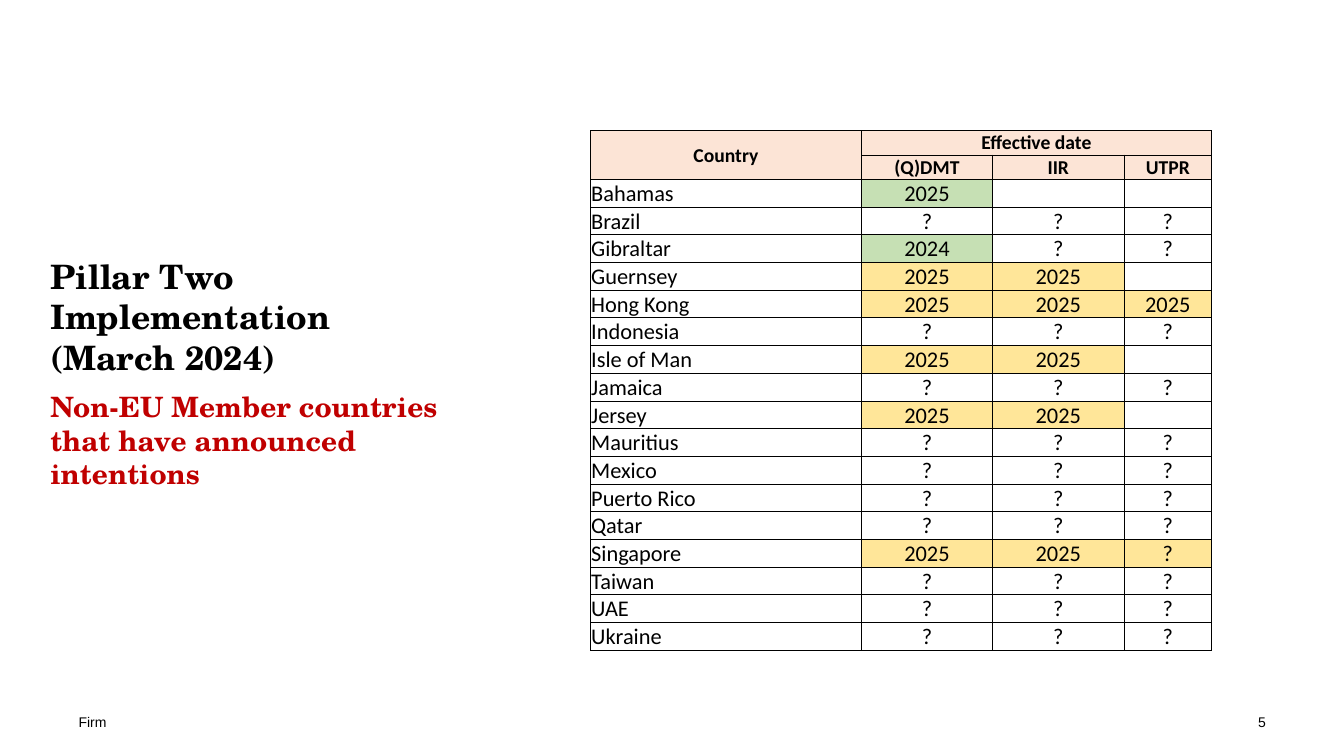
from lxml.etree import SubElement
from pptx import Presentation
from pptx.dml.color import RGBColor
from pptx.enum.text import MSO_ANCHOR, PP_ALIGN
from pptx.oxml import parse_xml
from pptx.oxml.ns import nsdecls, qn
from pptx.util import Cm, Pt

BLACK, RED, PEACH = "000000", "C00000", "FCE4D6"
FILLS = {"g": "C6E0B4", "y": "FFE699"}


def color(code):
    return RGBColor.from_string(code)


def write(par, text, size, face, ink=BLACK, bold=False, align=PP_ALIGN.LEFT):
    """Put styled text in a paragraph; an empty one keeps its font size."""
    par.text = text
    par.alignment = align
    for run in par.runs:
        for name, value in {"size": Pt(size), "name": face, "bold": bold}.items():
            setattr(run.font, name, value)
        run.font.color.rgb = color(ink)
    if not text:
        end = SubElement(par._p, qn("a:endParaRPr"), sz=str(size * 100))
        SubElement(end, qn("a:latin"), typeface=face)


prs = Presentation()
prs.slide_width, prs.slide_height = Cm(33.87), Cm(19.05)
slide = prs.slides.add_slide(prs.slide_layouts[6])

# Title and footer: box, then paragraphs as (text, size, font, colour, bold, align)
serif = "TeX Gyre Schola"
boxes = [
    ((1.27, 6.45, 10.95, 7.32), [
        ("Pillar Two Implementation\v(March 2024)", 24, serif, BLACK, True),
        ("Non-EU Member countries that have announced intentions",
         20, serif, RED, True)]),
    ((1.98, 17.98, 9.6, 0.43), [("Firm", 10, "Arial")]),
    ((26.24, 17.98, 5.66, 0.43),
     [("5", 10, "Arial", BLACK, False, PP_ALIGN.RIGHT)]),
]
for place, lines in boxes:
    frame = slide.shapes.add_textbox(*map(Cm, place)).text_frame
    frame.word_wrap = True
    for side in ("left", "right", "top", "bottom"):
        setattr(frame, f"margin_{side}", 0)
    for i, line in enumerate(lines):
        par = frame.add_paragraph() if i else frame.paragraphs[0]
        write(par, *line)
        if len(lines) > 1:
            par.space_after = Pt(9)

# Country table: a letter after a value names its fill
head = [["Country", "Effective date", "", ""], ["", "(Q)DMT", "IIR", "UTPR"]]
known = {
    "Bahamas": ["2025g", "", ""],
    "Gibraltar": ["2024g", "?", "?"],
    "Guernsey": ["2025y", "2025y", ""],
    "Hong Kong": ["2025y", "2025y", "2025y"],
    "Isle of Man": ["2025y", "2025y", ""],
    "Jersey": ["2025y", "2025y", ""],
    "Singapore": ["2025y", "2025y", "?y"],
}
names = ["Bahamas", "Brazil", "Gibraltar", "Guernsey", "Hong Kong", "Indonesia",
         "Isle of Man", "Jamaica", "Jersey", "Mauritius", "Mexico",
         "Puerto Rico", "Qatar", "Singapore", "Taiwan", "UAE", "Ukraine"]
rows = head + [[name] + known.get(name, ["?"] * 3) for name in names]
widths = [6.83, 3.3, 3.32, 2.2]
high = 0.56

table = slide.shapes.add_table(
    len(rows), len(widths), Cm(14.88), Cm(3.29),
    Cm(sum(widths)), Cm(high * len(rows))).table
table.first_row = table.horz_banding = False
for col, width in zip(table.columns, widths):
    col.width = Cm(width)

for r, row in enumerate(rows):
    table.rows[r].height = Cm(high)
    top = r < len(head)
    for c, text in enumerate(row):
        cell = table.cell(r, c)
        fill = PEACH if top else None
        if not top and c and text[-1:] in FILLS:
            text, fill = text[:-1], FILLS[text[-1]]
        low = c == 0 and not top or (r, c) == (0, 1)
        form = {
            "margin_left": Cm(0.02), "margin_right": Cm(0.02),
            "margin_top": Cm(0.02), "margin_bottom": 0,
            "vertical_anchor": MSO_ANCHOR.BOTTOM if low else MSO_ANCHOR.MIDDLE,
        }
        for name, value in form.items():
            setattr(cell, name, value)
        align = PP_ALIGN.CENTER if top or c else PP_ALIGN.LEFT
        write(cell.text_frame.paragraphs[0], text, 14 if top else 16,
              "Calibri", BLACK, top, align)
        if fill:
            cell.fill.solid()
            cell.fill.fore_color.rgb = color(fill)
        else:
            cell.fill.background()
        for i, side in enumerate("LRTB"):
            cell._tc.get_or_add_tcPr().insert(i, parse_xml(
                f'<a:ln{side} {nsdecls("a")} w="{Pt(0.5)}"><a:solidFill>'
                f'<a:srgbClr val="{BLACK}"/></a:solidFill></a:ln{side}>'))

table.cell(0, 0).merge(table.cell(1, 0))
table.cell(0, 1).merge(table.cell(0, 3))

prs.save("out.pptx")
